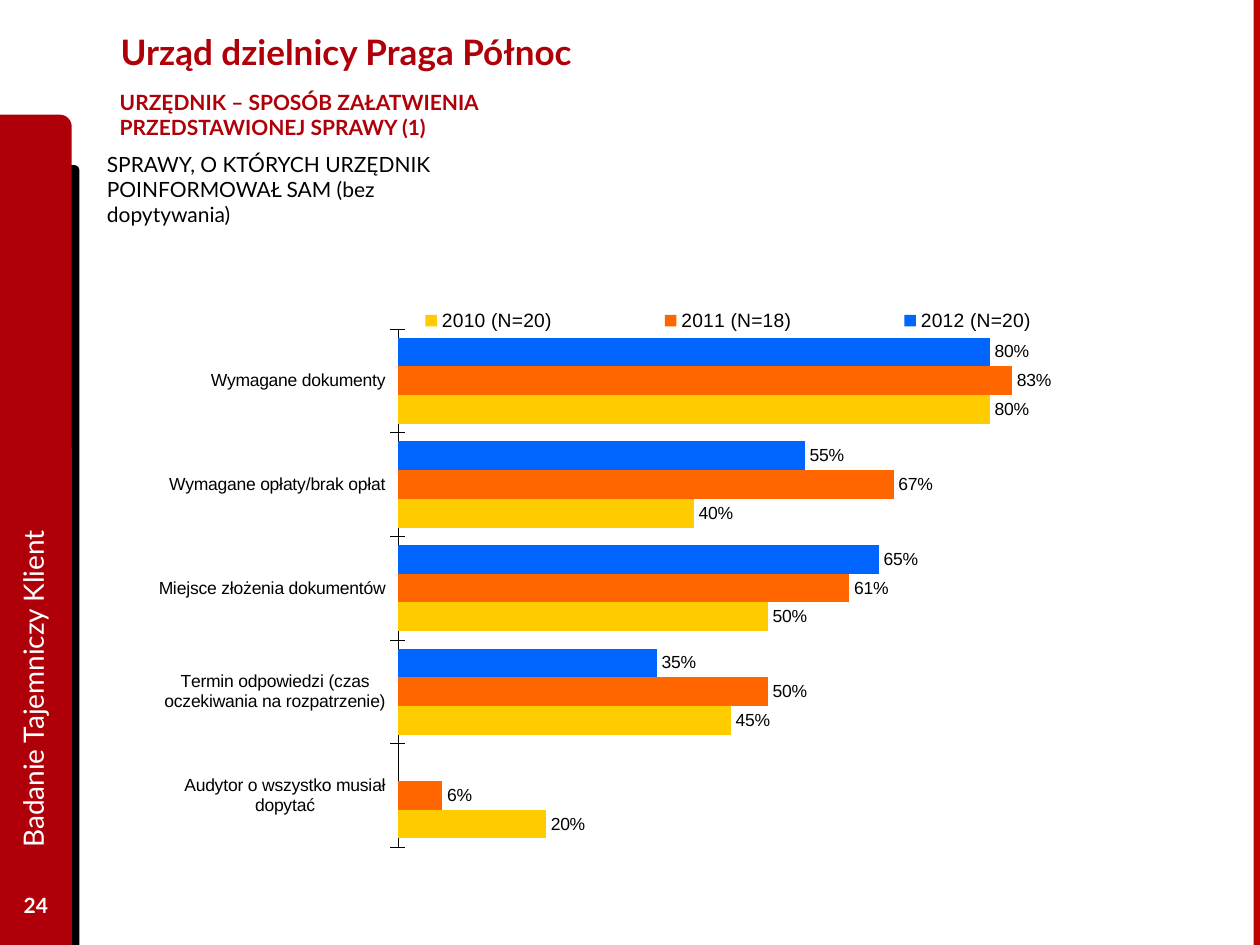
from lxml import etree
from pptx import Presentation
from pptx.chart.data import CategoryChartData as ChartData
from pptx.dml.color import RGBColor as RGB
from pptx.enum.chart import (XL_CHART_TYPE as Kind, XL_LABEL_POSITION as LabelPos,
                             XL_LEGEND_POSITION as LegendPos, XL_TICK_MARK as Mark)
from pptx.enum.shapes import MSO_SHAPE as Shape
from pptx.enum.text import MSO_ANCHOR as Anchor, MSO_AUTO_SIZE as Fit, PP_ALIGN as Align
from pptx.oxml.ns import qn
from pptx.util import Inches, Pt

RED = RGB(0xAF, 0x00, 0x0A)
EDGE = RGB(0xBD, 0x00, 0x00)
BLACK = RGB(0x00, 0x00, 0x00)
WHITE = RGB(0xFF, 0xFF, 0xFF)
BLUE = RGB(0x00, 0x66, 0xFF)
ORANGE = RGB(0xFF, 0x66, 0x00)
YELLOW = RGB(0xFF, 0xCC, 0x00)

CATS = ["Wymagane dokumenty", "Wymagane opłaty/brak opłat",
        "Miejsce złożenia dokumentów",
        "Termin odpowiedzi (czas oczekiwania na rozpatrzenie)",
        "Audytor o wszystko musiał dopytać"]
SERIES = [("2012 (N=20)", BLUE, (0.80, 0.55, 0.65, 0.35, None)),
          ("2011 (N=18)", ORANGE, (0.83, 0.67, 0.61, 0.50, 0.06)),
          ("2010 (N=20)", YELLOW, (0.80, 0.40, 0.50, 0.45, 0.20))]


def set_font(font, name, size, color, bold=False):
    font.name, font.size, font.bold = name, Pt(size), bold
    font.color.rgb = color


def add_block(slide, kind, x, y, w, h, color):
    block = slide.shapes.add_shape(kind, Inches(x), Inches(y), Inches(w), Inches(h))
    block.shadow.inherit = False
    block.fill.solid()
    block.fill.fore_color.rgb = color
    block.line.fill.background()
    return block


def add_text(slide, x, y, w, h, text, size, color, bold=False, anchor=Anchor.TOP):
    box = slide.shapes.add_textbox(Inches(x), Inches(y), Inches(w), Inches(h))
    frame = box.text_frame
    frame.word_wrap = True
    frame.vertical_anchor = anchor
    frame.text = text
    set_font(frame.paragraphs[0].runs[0].font, "Lato", size, color, bold)
    return box


def set_layout(part, x, y, w, h, inner=False):
    """Place a chart part by fractions of the chart area."""
    old = part.find(qn("c:layout"))
    if old is not None:
        part.remove(old)
    layout = etree.Element(qn("c:layout"))
    manual = etree.SubElement(layout, qn("c:manualLayout"))
    items = [("layoutTarget", "inner")] if inner else []
    items += [("xMode", "edge"), ("yMode", "edge"),
              ("x", x), ("y", y), ("w", w), ("h", h)]
    for tag, val in items:
        etree.SubElement(manual, qn("c:" + tag)).set("val", str(val))
    part.insert(0 if inner else 1, layout)


def add_side(slide, x, y, w, h):
    # Red tab with its black backing
    top = 0.91
    add_block(slide, Shape.ROUND_1_RECTANGLE, x + 0.39, y + 1.31, 0.24, h - 1.31, BLACK)
    add_block(slide, Shape.ROUND_1_RECTANGLE, x, y + top, w, h - top, RED)

    # Upright study name and page number
    name = add_text(slide, x - 2.62, y + 3.69, 5.76, 0.51,
                    "Badanie Tajemniczy Klient", 16, WHITE, anchor=Anchor.MIDDLE)
    name.rotation = 270
    page = add_text(slide, x, y + 6.98, w, 0.4, "24", 12, WHITE, True, Anchor.MIDDLE)
    page.text_frame.paragraphs[0].alignment = Align.CENTER


def add_edge(slide, x, y, w, h):
    # A flat bar turned upright about its centre
    bar = add_block(slide, Shape.RECTANGLE, x + (w - h) / 2, y + (h - w) / 2, h, w, EDGE)
    bar.rotation = 90


def add_head(slide, x, y):
    add_text(slide, x + 0.11, y, 7.77, 0.72, "Urząd dzielnicy Praga Północ",
             20, RED, True, Anchor.MIDDLE)
    sub = add_text(slide, x, y + 0.61, 3.85, 0.33,
                   "URZĘDNIK – SPOSÓB ZAŁATWIENIA PRZEDSTAWIONEJ SPRAWY (1)",
                   12, RED, True).text_frame
    sub.word_wrap = False
    sub.margin_left = sub.margin_right = Inches(0.2)
    note = add_text(slide, x, y + 1.1, 3.23, 0.71,
                    "SPRAWY, O KTÓRYCH URZĘDNIK POINFORMOWAŁ SAM (bez dopytywania)",
                    12, BLACK)
    note.text_frame.auto_size = Fit.SHAPE_TO_FIT_TEXT


def add_bars(slide, x, y, w, h):
    data = ChartData(number_format="0%")
    data.categories = CATS
    for name, _, vals in SERIES:
        data.add_series(name, vals)
    chart = slide.shapes.add_chart(Kind.BAR_CLUSTERED, Inches(x), Inches(y),
                                   Inches(w), Inches(h), data).chart
    chart.has_title = False
    set_font(chart.font, "Arial", 9.8, BLACK)

    # Bars and their labels
    plot = chart.plots[0]
    plot.gap_width = 60
    plot.overlap = 0
    plot.vary_by_categories = False
    for bars, (_, color, _) in zip(plot.series, SERIES):
        bars.invert_if_negative = False
        bars.format.fill.solid()
        bars.format.fill.fore_color.rgb = color
        labels = bars.data_labels
        labels.show_value = True
        labels.number_format = "0%"
        labels.number_format_is_linked = False
        labels.position = LabelPos.OUTSIDE_END
        set_font(labels.font, "Arial", 10, BLACK)

    # Axes
    cat = chart.category_axis
    cat.reverse_order = True
    cat.has_major_gridlines = False
    cat.major_tick_mark = Mark.CROSS
    cat.format.line.color.rgb = BLACK
    cat.format.line.width = Pt(0.25)
    set_font(cat.tick_labels.font, "Arial", 10, BLACK)
    val = chart.value_axis
    val.minimum_scale, val.maximum_scale, val.major_unit = 0, 1, 0.2
    val.has_major_gridlines = False
    val.tick_labels.number_format = "0%"
    val.tick_labels.number_format_is_linked = False
    val.visible = False

    # Legend in a row above the bars
    chart.has_legend = True
    legend = chart.legend
    legend.position = LegendPos.RIGHT
    legend.include_in_layout = False
    set_font(legend.font, "Arial", 11, BLACK)
    root = chart.element
    set_layout(root.find(".//" + qn("c:legend")), 0.17, 0.04, 0.83, 0.05)
    set_layout(root.find(".//" + qn("c:plotArea")), 0.25, 0.08, 0.75, 0.91, inner=True)


def main():
    prs = Presentation()
    prs.slide_width, prs.slide_height = Inches(10), Inches(7.5)
    slide = prs.slides.add_slide(prs.slide_layouts[6])
    add_side(slide, 0, 0, 0.57, 7.5)
    add_edge(slide, 9.95, 0, 0.05, 7.5)
    add_head(slide, 0.75, 0.05)
    add_bars(slide, 1.2, 2.25, 7.83, 4.52)
    prs.save("out.pptx")


if __name__ == "__main__":
    main()
